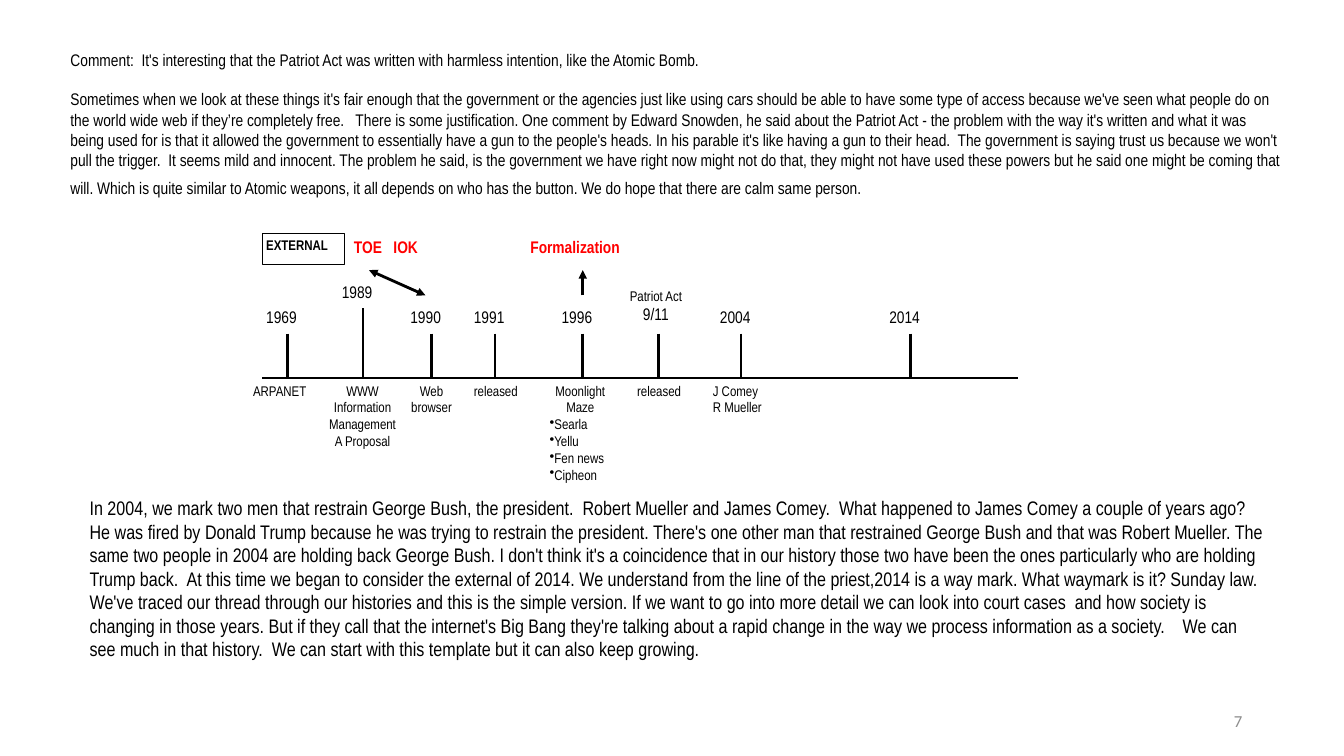
from dataclasses import dataclass
from lxml.etree import SubElement
from pptx import Presentation
from pptx.dml.color import RGBColor
from pptx.enum.shapes import MSO_CONNECTOR, MSO_SHAPE
from pptx.enum.text import MSO_ANCHOR, PP_ALIGN
from pptx.oxml.ns import qn
from pptx.util import Inches, Pt


@dataclass
class Theme:
    ink: RGBColor = RGBColor(0, 0, 0)
    red: RGBColor = RGBColor(255, 0, 0)
    gray: RGBColor = RGBColor(0x8C, 0x8C, 0x8C)
    font: str = "Arial Narrow"
    plain: str = "Calibri"
    small: int = 10
    base: int = 12
    large: int = 14
    tall: int = 18
    line: float = 2
    thin: float = 0.25
    pad: float = 0.04


class Board:
    def __init__(self, slide, theme):
        self.slide = slide
        self.theme = theme

    def style(self, run, size, color=None, bold=False, font=None):
        run.font.name = font or self.theme.font
        run.font.size = Pt(size)
        run.font.bold = bold
        run.font.color.rgb = color or self.theme.ink

    def fill(self, shape, lines, size, align=PP_ALIGN.LEFT, pad=None, **look):
        frame = shape.text_frame
        frame.word_wrap = True
        frame.vertical_anchor = MSO_ANCHOR.TOP
        if pad is not None:
            frame.margin_left = frame.margin_right = Inches(pad)
            frame.margin_top = frame.margin_bottom = Inches(pad)
        frame.text = "\n".join(lines)
        for para in frame.paragraphs:
            para.alignment = align
            for run in para.runs:
                self.style(run, size, **look)
        return shape

    def text(self, box, lines, size, **look):
        shape = self.slide.shapes.add_textbox(*map(Inches, box))
        return self.fill(shape, lines, size, **look)

    def label(self, box, lines, size, **look):
        return self.text(box, lines, size, pad=self.theme.pad, **look)

    def frame(self, box, lines, size, **look):
        shape = self.slide.shapes.add_shape(MSO_SHAPE.RECTANGLE, *map(Inches, box))
        shape.shadow.inherit = False
        shape.fill.background()
        shape.line.color.rgb = self.theme.ink
        shape.line.width = Pt(self.theme.thin)
        return self.fill(shape, lines, size, pad=self.theme.pad, **look)

    def line(self, start, end, heads=()):
        link = self.slide.shapes.add_connector(
            MSO_CONNECTOR.STRAIGHT, *map(Inches, (*start, *end)))
        link.line.color.rgb = self.theme.ink
        link.line.width = Pt(self.theme.line)
        part = link._element.spPr
        for head in heads:
            SubElement(part.find(qn("a:ln")), qn(f"a:{head}"), type="triangle")
        SubElement(part, qn("a:effectLst"))
        return link

    def bullet(self, para):
        SubElement(para._p.get_or_add_pPr(), qn("a:buChar"), char="•")

    def stop(self, x, year, top):
        tick = self.line((x, top), (x, AXIS))
        if year:
            box = self.label((x - 0.25, top - 0.31, 0.5, 0.31), [year], self.theme.base)
            tick.begin_connect(box, 2)


AXIS = 3.75
LOW = 3.31
STOPS = [
    (2.85, "1969", LOW),
    (3.6, "1989", 3.06),
    (4.28, "1990", LOW),
    (4.91, "1991", LOW),
    (5.78, "1996", LOW),
    (6.53, None, LOW),
    (7.35, "2004", LOW),
    (9.03, "2014", LOW),
]
LEFT, MID = PP_ALIGN.LEFT, PP_ALIGN.CENTER
EVENTS = [
    (2.47, 0.69, 0.31, LEFT, ["ARPANET"]),
    (3.22, 0.75, 0.81, MID, ["WWW", "Information", "Management", "A Proposal"]),
    (4.03, 0.5, 0.69, MID, ["Web browser"]),
    (4.66, 0.56, 0.31, LEFT, ["released"]),
    (6.28, 0.56, 0.31, LEFT, ["released"]),
    (7.03, 0.62, 1.06, LEFT, ["J Comey", "R Mueller"]),
]
SITES = ["Moonlight Maze", "Searla", "Yellu", "Fen news", "Cipheon"]
NOTE = "Comment:  It's interesting that the Patriot Act was written with harmless intention, like the Atomic Bomb."
VIEW = [
    "Sometimes when we look at these things it's fair enough that the government or the agencies just like "
    "using cars should be able to have some type of access because we've seen what people do on the world wide "
    "web if they’re completely free.   There is some justification.",
    "One comment by Edward Snowden, he said about the Patriot Act - the problem with the way it's written and "
    "what it was being used for is that it allowed the government to essentially have a gun to the people's "
    "heads. In his parable it's like having a gun to their head.  The government is saying trust us because we "
    "won't pull the trigger.  It seems mild and innocent.",
    "The problem he said, is the government we have right now might not do that, they might not have used these "
    "powers but he said one might be coming that will. Which is quite similar to Atomic weapons, it all depends "
    "on who has the button. We do hope that there are calm same person.",
]
STORY = [
    "In 2004, we mark two men that restrain George Bush, the president.  Robert Mueller and James Comey.  What "
    "happened to James Comey a couple of years ago? He was fired by Donald Trump because he was trying to "
    "restrain the president. There's one other man that restrained George Bush and that was Robert Mueller.",
    "The same two people in 2004 are holding back George Bush. I don't think it's a coincidence that in our "
    "history those two have been the ones particularly who are holding Trump back.  At this time we began to "
    "consider the external of 2014. We understand from the line of the priest,2014 is a way mark. What waymark "
    "is it? Sunday law.",
    "We've traced our thread through our histories and this is the simple version. If we want to go into more "
    "detail we can look into court cases  and how society is changing in those years. But if they call that the "
    "internet's Big Bang they're talking about a rapid change in the way we process information as a society. ",
    "  We can see much in that history.  We can start with this template but it can also keep growing.",
]


def main():
    deck = Presentation()
    deck.slide_width, deck.slide_height = Inches(13.33), Inches(7.5)
    theme = Theme()
    board = Board(deck.slides.add_slide(deck.slide_layouts[6]), theme)

    page = board.text((9.42, 6.95, 3, 0.4), ["7"], theme.base,
                      align=PP_ALIGN.RIGHT, color=theme.gray, font=theme.plain)
    page.text_frame.vertical_anchor = MSO_ANCHOR.MIDDLE

    intro = board.text((0.6, 0.44, 12.21, 1.62), [NOTE, " ".join(VIEW)], theme.base)
    last = intro.text_frame.paragraphs[-1]
    last.space_before = Pt(14)
    tail = last.add_run()
    tail.text = " "
    board.style(tail, theme.tall, font=theme.plain)

    board.line((2.6, AXIS), (10.1, AXIS))
    for stop in STOPS:
        board.stop(*stop)
    for left, width, height, align, lines in EVENTS:
        board.label((left, AXIS, width, height), lines, theme.small, align=align)

    sites = board.label((5.41, AXIS, 0.69, 1.12), SITES, theme.small)
    first, *rest = sites.text_frame.paragraphs
    first.alignment = MID
    for para in rest:
        board.bullet(para)

    act = board.label((6.16, 2.81, 0.69, 0.5), ["Patriot Act", "9/11"], theme.small, align=MID)
    board.style(act.text_frame.paragraphs[1].runs[0], theme.base)

    board.frame((2.6, 2.31, 0.81, 0.31), ["EXTERNAL"], theme.small, bold=True)
    for left, name in ((3.47, "TOE   IOK"), (5.22, "Formalization")):
        board.label((left, 2.31, 1.12, 0.31), [name], theme.base, color=theme.red, bold=True)
    board.line((3.66, 2.68), (4.22, 2.93), ("headEnd", "tailEnd"))
    board.line((5.78, 2.93), (5.78, 2.68), ("tailEnd",))

    board.text((0.79, 4.87, 11.88, 2.05), [" ".join(STORY)], theme.large)
    deck.save("out.pptx")


if __name__ == "__main__":
    main()
